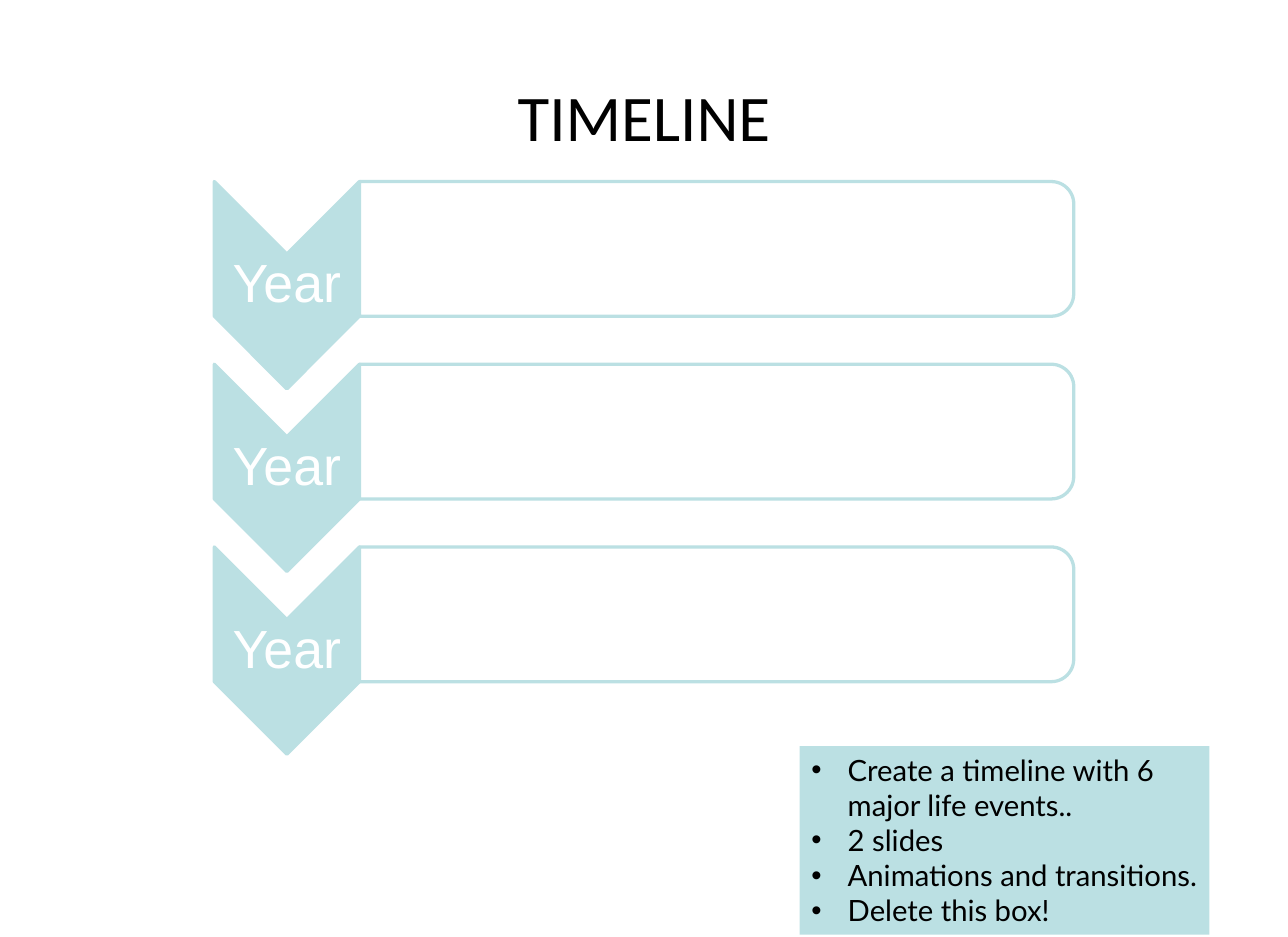
from pptx import Presentation
from pptx.dml.color import RGBColor
from pptx.enum.shapes import MSO_SHAPE
from pptx.enum.text import MSO_ANCHOR, MSO_AUTO_SIZE, PP_ALIGN
from pptx.util import Inches, Pt

CHEVRON, PANEL = MSO_SHAPE.CHEVRON, MSO_SHAPE.ROUND_2_SAME_RECTANGLE
MIDDLE, TOP = MSO_ANCHOR.MIDDLE, MSO_ANCHOR.TOP
CENTER, LEFT = PP_ALIGN.CENTER, PP_ALIGN.LEFT
NO_AUTOFIT = MSO_AUTO_SIZE.NONE

TITLE = "TIMELINE"
YEARS = ["Year", "Year", "Year"]
INSTRUCTIONS = [
    "Create a timeline with 6 major life events..",
    "2 slides",
    "Animations and transitions.",
    "Delete this box!",
]
AQUA, WHITE, BLACK = "BBE0E3", "FFFFFF", "000000"

SLIDE_W, SLIDE_H = 11, 8
TITLE_BOX = (0.05 * SLIDE_W, 0.04 * SLIDE_H, 0.9 * SLIDE_W, 1.33)
INSTRUCTION_BOX = (6.83, 6.37, 3.5, 1.61)
BULLET_INDENT = 0.31

TIMELINE_LEFT, TIMELINE_TOP = 1.83, 1.55
ROW_PITCH = 1.56
CHEVRON_W, CHEVRON_H = 1.24, 1.77
PANEL_W, PANEL_H = 6.1, 1.15
YEAR_H = 0.53


def color(hex_code):
    return RGBColor.from_string(hex_code)


def place(shape, left, top, width, height):
    shape.left, shape.top = Inches(left), Inches(top)
    shape.width, shape.height = Inches(width), Inches(height)


def write(shape, lines, font, size, ink, align=LEFT, anchor=TOP,
          inset=(0.1, 0.05), spacing=1.0, bullet_indent=0):
    frame = shape.text_frame
    frame.auto_size = NO_AUTOFIT
    frame.word_wrap = True
    frame.vertical_anchor = anchor
    frame.margin_left = frame.margin_right = Inches(inset[0])
    frame.margin_top = frame.margin_bottom = Inches(inset[1])
    frame.text = "\n".join(lines)
    for paragraph in frame.paragraphs:
        paragraph.alignment = align
        paragraph.line_spacing = spacing
        paragraph.space_before = Pt(0)
        if bullet_indent:
            properties = paragraph._p.get_or_add_pPr()
            properties.set("marL", str(Inches(bullet_indent)))
            properties.set("indent", str(-Inches(bullet_indent)))
        for run in paragraph.runs:
            run.font.name, run.font.size = font, Pt(size)
            run.font.color.rgb = color(ink)


def add_turned(slide, preset, left, top, width, height, fill):
    """Add a shape turned a quarter clockwise that covers the given box."""
    shape = slide.shapes.add_shape(preset, 0, 0, 0, 0)
    place(shape, left + (width - height) / 2, top + (height - width) / 2,
          height, width)
    shape.rotation = 90
    shape.shadow.inherit = False
    shape.fill.solid()
    shape.fill.fore_color.rgb = color(fill)
    shape.line.color.rgb = color(AQUA)
    shape.line.width = Pt(2)


def add_event(slide, year, top):
    add_turned(slide, CHEVRON, TIMELINE_LEFT, top, CHEVRON_W, CHEVRON_H, AQUA)
    label = slide.shapes.add_textbox(0, 0, 0, 0)
    place(label, TIMELINE_LEFT, top + (CHEVRON_H - YEAR_H) / 2,
          CHEVRON_W, YEAR_H)
    write(label, [year], "Arial", 33, WHITE, align=CENTER, anchor=MIDDLE,
          inset=(0.02, 0.02), spacing=0.9)
    add_turned(slide, PANEL, TIMELINE_LEFT + CHEVRON_W, top,
               PANEL_W, PANEL_H, WHITE)


def main():
    deck = Presentation()
    deck.slide_width, deck.slide_height = Inches(SLIDE_W), Inches(SLIDE_H)
    slide = deck.slides.add_slide(deck.slide_layouts[1])
    title, instructions = slide.placeholders

    place(title, *TITLE_BOX)
    write(title, [TITLE], "Calibri", 40, BLACK, align=CENTER, anchor=MIDDLE)

    place(instructions, *INSTRUCTION_BOX)
    instructions.fill.solid()
    instructions.fill.fore_color.rgb = color(AQUA)
    write(instructions, INSTRUCTIONS, "Lato", 18, BLACK,
          bullet_indent=BULLET_INDENT)

    for row, year in enumerate(YEARS):
        add_event(slide, year, TIMELINE_TOP + row * ROW_PITCH)

    deck.save("out.pptx")


if __name__ == "__main__":
    main()
